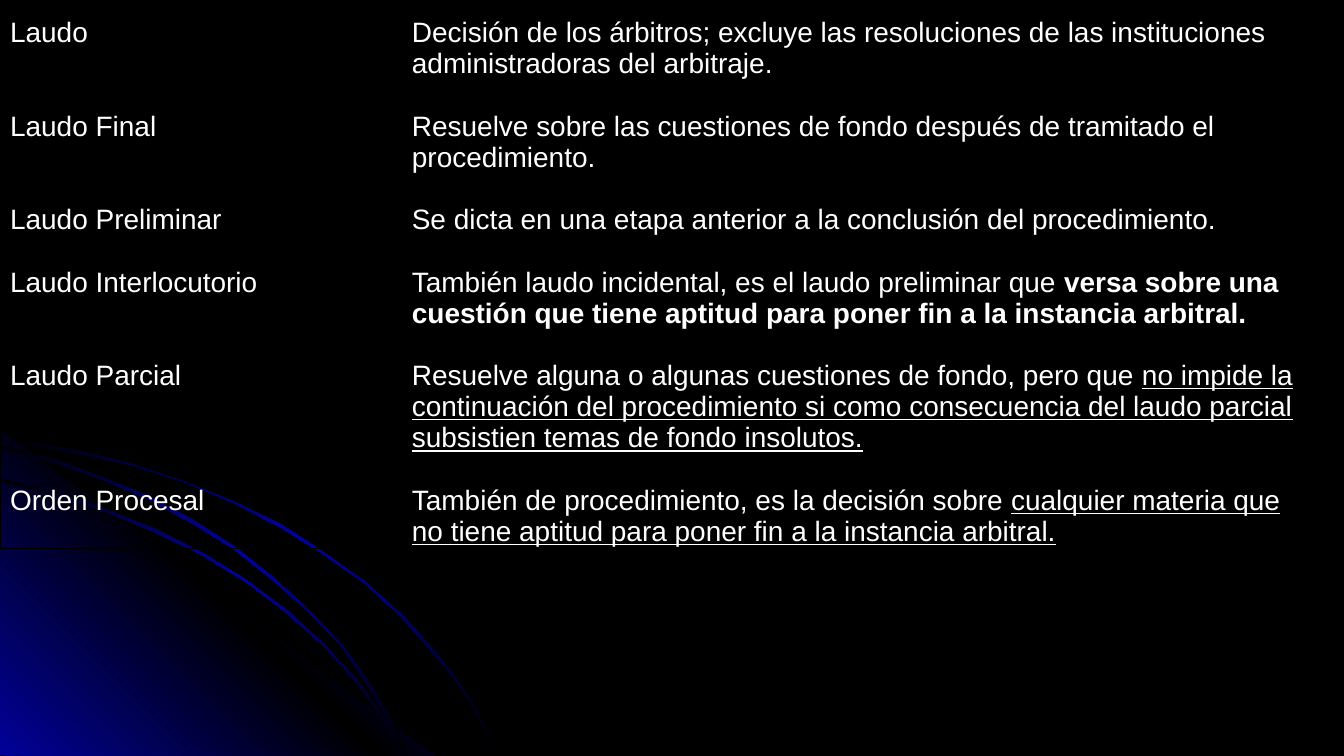
from lxml import etree
from pptx import Presentation
from pptx import util as u
from pptx.dml import color
from pptx.oxml import ns

BLACK, BLUE, WHITE = "000000", "010199", "FFFFFF"


def rgb(value):
    return color.RGBColor.from_string(value)


class Deck:
    font = "Arial"
    size = u.Pt(15)

    def __init__(self, width, height):
        self.presentation = Presentation()
        self.presentation.slide_width = u.Inches(width)
        self.presentation.slide_height = u.Inches(height)
        self.slide = self.presentation.slides.add_slide(self.presentation.slide_layouts[6])

    def background(self, fill):
        self.slide.background.fill.solid()
        self.slide.background.fill.fore_color.rgb = rgb(fill)

    def gradient_outline(self, points, edge, middle, angle):
        """Closed outline, shaded edge - middle - edge (angle clockwise)."""
        corners = [(u.Inches(x), u.Inches(y)) for x, y in points]
        builder = self.slide.shapes.build_freeform(*corners[0])
        builder.add_line_segments(corners[1:], close=True)
        shape = builder.convert_to_shape()
        shape.shadow.inherit = False
        shape.line.fill.background()
        shape.fill.gradient()
        gradient = shape.element.spPr.find(ns.qn("a:gradFill"))
        for child in list(gradient):
            gradient.remove(child)
        stops = etree.SubElement(gradient, ns.qn("a:gsLst"))
        for position, value in ((0, edge), (50, middle), (100, edge)):
            stop = etree.SubElement(stops, ns.qn("a:gs"), pos=str(position * 1000))
            etree.SubElement(stop, ns.qn("a:srgbClr"), val=value)
        etree.SubElement(gradient, ns.qn("a:lin"), ang=str(angle * 60000), scaled="0")

    def table(self, left, top, widths, heights, rows):
        frame = self.slide.shapes.add_table(
            len(rows), len(widths), u.Inches(left), u.Inches(top),
            u.Inches(sum(widths)), u.Inches(sum(heights)))
        table = frame.table
        table.first_row = table.horz_banding = False
        for column, width in zip(table.columns, widths):
            column.width = u.Inches(width)
        for row, height, (term, *definition) in zip(table.rows, heights, rows):
            row.height = u.Inches(height)
            self.cell(row.cells[0], term)
            self.cell(row.cells[1], *definition)

    def cell(self, cell, plain, emphasis="", style=None):
        cell.margin_left = cell.margin_right = u.Pt(5.4)
        cell.margin_top, cell.margin_bottom = u.Inches(0.01), 0
        paragraph = cell.text_frame.paragraphs[0]
        paragraph.text = plain
        paragraph.line_spacing = u.Pt(16.65)
        if emphasis:
            run = paragraph.add_run()
            run.text = emphasis
            run.font.bold = style == "bold"
            run.font.underline = style == "underline"
        for run in paragraph.runs:
            run.font.name = self.font
            run.font.size = self.size
            run.font.color.rgb = rgb(WHITE)
        properties = cell._tc.get_or_add_tcPr()
        for side in ("a:lnL", "a:lnR", "a:lnT", "a:lnB"):
            border = etree.SubElement(properties, ns.qn(side), w=str(u.Pt(0.75)))
            solid = etree.SubElement(border, ns.qn("a:solidFill"))
            etree.SubElement(solid, ns.qn("a:srgbClr"), val=BLACK)
        cell.fill.background()

    def save(self):
        self.presentation.save("out.pptx")


CORNER = [(3.22, 5.62), (0, 5.62), (0, 3.2)]

OUTER_ARC = [
    (0.57, 3.35), (0.28, 3.3), (0, 3.27), (0, 3.28), (0.28, 3.32), (0.56, 3.37),
    (0.97, 3.46), (1.35, 3.58), (1.73, 3.74), (2.08, 3.92), (2.4, 4.12),
    (2.71, 4.34), (2.98, 4.59), (3.23, 4.87), (3.37, 5.04), (3.5, 5.23),
    (3.6, 5.42), (3.7, 5.61), (3.72, 5.61), (3.62, 5.42), (3.52, 5.23),
    (3.39, 5.04), (3.25, 4.86), (3, 4.58), (2.72, 4.33), (2.41, 4.11),
    (2.09, 3.9), (1.74, 3.73), (1.36, 3.58), (0.98, 3.45)]

INNER_ARC = [
    (2.85, 5.35), (2.94, 5.49), (3.01, 5.61), (3.03, 5.61), (2.96, 5.47),
    (2.86, 5.34), (2.67, 5.07), (2.42, 4.8), (2.15, 4.55), (1.84, 4.32),
    (1.52, 4.12), (1.17, 3.94), (0.79, 3.79), (0.41, 3.66), (0, 3.56),
    (0, 3.58), (0.39, 3.68), (0.77, 3.8), (1.15, 3.96), (1.5, 4.13),
    (1.83, 4.33), (2.13, 4.56), (2.41, 4.81), (2.65, 5.08)]

MIDDLE_ARC = [
    (0, 3.31), (0, 3.33), (0.36, 3.43), (0.74, 3.56), (1.09, 3.71), (1.42, 3.89),
    (1.73, 4.08), (2.02, 4.31), (2.28, 4.54), (2.53, 4.8), (2.67, 5), (2.8, 5.21),
    (2.92, 5.42), (3.01, 5.61), (3.03, 5.61), (2.94, 5.4), (2.82, 5.19),
    (2.69, 4.99), (2.54, 4.79), (2.29, 4.53), (2.04, 4.3), (1.75, 4.07),
    (1.44, 3.87), (1.11, 3.69), (0.76, 3.55), (0.39, 3.41)]

# Term, definition, emphasised ending and its style
TERMS = [
    ("Laudo", "Decisión de los árbitros; excluye las resoluciones de las "
     "instituciones administradoras del arbitraje."),
    ("Laudo Final", "Resuelve sobre las cuestiones de fondo después de tramitado "
     "el procedimiento."),
    ("Laudo Preliminar", "Se dicta en una etapa anterior a la conclusión del "
     "procedimiento."),
    ("Laudo Interlocutorio", "También laudo incidental, es el laudo preliminar que ",
     "versa sobre una cuestión que tiene aptitud para poner fin a la instancia "
     "arbitral.", "bold"),
    ("Laudo Parcial", "Resuelve alguna o algunas cuestiones de fondo, pero que ",
     "no impide la continuación del procedimiento si como consecuencia del laudo "
     "parcial subsistien temas de fondo insolutos.", "underline"),
    ("Orden Procesal", "También de procedimiento, es la decisión sobre ",
     "cualquier materia que no tiene aptitud para poner fin a la instancia "
     "arbitral.", "underline"),
]
LINE_HEIGHT = 0.232
SPACED_LINES = [2, 2, 1, 2, 3]
LAST_HEIGHT = 0.48


def main():
    deck = Deck(10, 10 * 9 / 16)

    # Backdrop: glowing corner and arcs
    deck.background(BLACK)
    deck.gradient_outline(OUTER_ARC, BLACK, BLUE, 45)
    deck.gradient_outline(CORNER, BLUE, BLACK, 315)
    for arc in (INNER_ARC, MIDDLE_ARC):
        deck.gradient_outline(arc, BLACK, BLUE, 45)

    # Glossary: every row but the last leaves one free line below its text
    heights = [(lines + 1) * LINE_HEIGHT for lines in SPACED_LINES] + [LAST_HEIGHT]
    deck.table(0, 0.12, [2.99, 6.81], heights, TERMS)

    deck.save()


if __name__ == "__main__":
    main()
